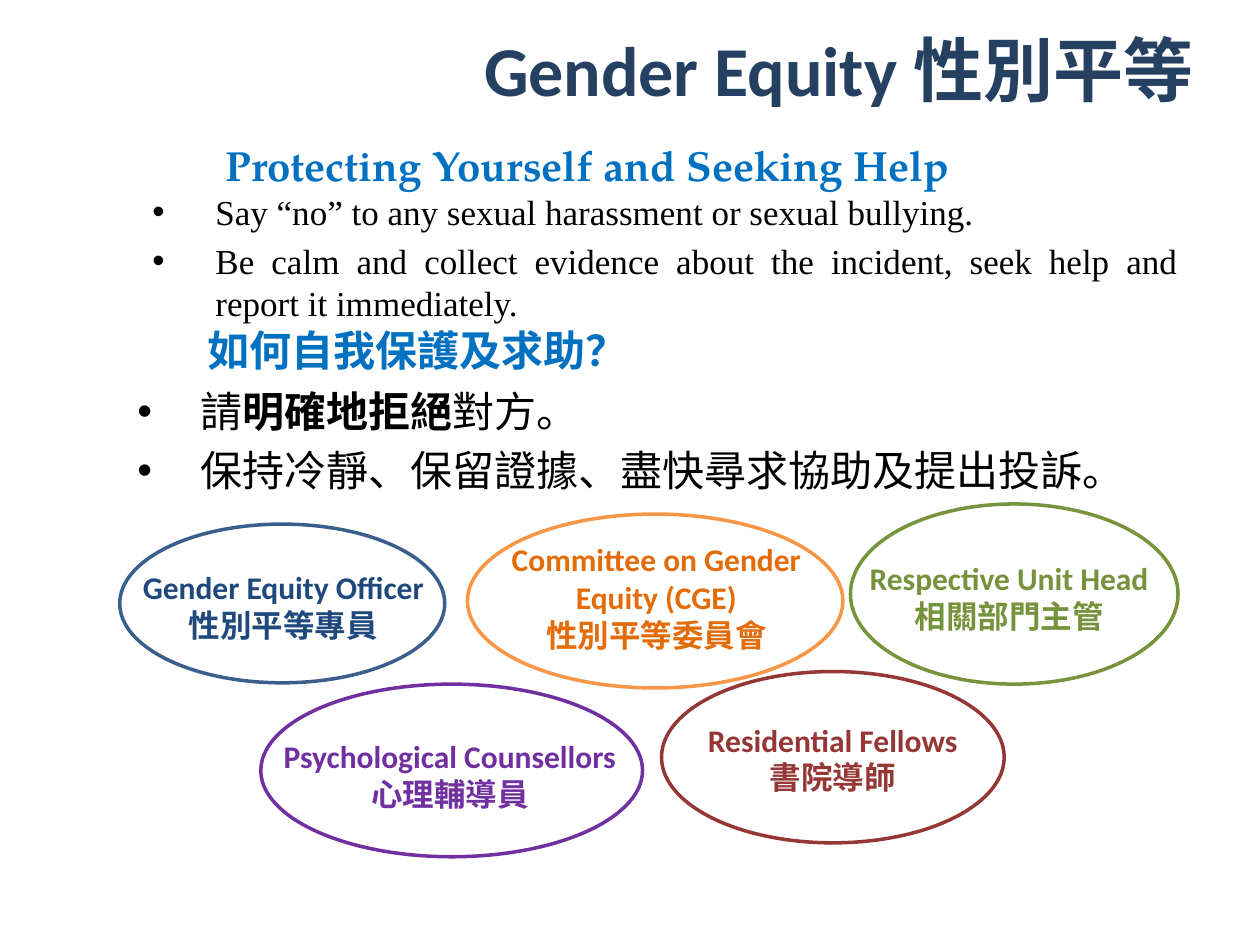
from lxml import etree
from pptx import Presentation
from pptx.dml.color import RGBColor
from pptx.enum import shapes, text
from pptx.oxml import ns
from pptx.util import Inches, Pt

NAVY = RGBColor(0x25, 0x40, 0x61)
SKY = RGBColor(0x00, 0x70, 0xC0)
BLACK = RGBColor(0, 0, 0)
WHITE = RGBColor(0xFF, 0xFF, 0xFF)
STEEL = RGBColor(0x3A, 0x5F, 0x8C)
BLUE = RGBColor(0x1F, 0x49, 0x7D)
AMBER = RGBColor(0xF7, 0x96, 0x46)
RUST = RGBColor(0xE3, 0x6C, 0x09)
LEAF = RGBColor(0x77, 0x93, 0x3C)
GREEN = RGBColor(0x76, 0x92, 0x3C)
PURPLE = RGBColor(0x70, 0x30, 0xA0)
WINE = RGBColor(0x95, 0x37, 0x35)
RED = RGBColor(0x95, 0x37, 0x34)

HAN = "Noto Sans CJK SC"
SERIF = "Times New Roman"
CENTER = text.PP_ALIGN.CENTER


def place(shape, box):
    shape.left, shape.top, shape.width, shape.height = map(Inches, box)


def add_run(para, words, face, size, color, bold=False):
    run = para.add_run()
    run.text = words
    font = run.font
    font.size, font.bold = Pt(size), bold
    font.color.rgb = color
    font.name = face
    asian = etree.SubElement(run._r.get_or_add_rPr(), ns.qn("a:ea"))
    asian.set("typeface", HAN)


def add_bullet(para):
    props = para._p.get_or_add_pPr()
    props.set("marL", str(Inches(0.5)))
    props.set("indent", str(-Inches(0.5)))
    face = etree.SubElement(props, ns.qn("a:buFont"))
    face.set("typeface", "Arial")
    mark = etree.SubElement(props, ns.qn("a:buChar"))
    mark.set("char", "•")


def fill_title(title, box):
    place(title, box)
    frame = title.text_frame
    frame.auto_size = text.MSO_AUTO_SIZE.NONE
    frame.vertical_anchor = text.MSO_ANCHOR.MIDDLE
    para = frame.paragraphs[0]
    para.alignment = CENTER
    add_run(para, "Gender Equity 性別平等", "Calibri", 40, NAVY, True)


def fill_list(body, box, items, face, size):
    """Each item is a list of (words, bold) runs."""
    place(body, box)
    frame = body.text_frame
    frame.auto_size = text.MSO_AUTO_SIZE.NONE
    for i, item in enumerate(items):
        para = frame.add_paragraph() if i else frame.paragraphs[0]
        para.alignment = text.PP_ALIGN.JUSTIFY
        para.space_before = Pt(size * 0.2 if i else 0)
        add_bullet(para)
        for words, bold in item:
            add_run(para, words, face, size, BLACK, bold)


def add_label(slide, box, lines, face, size, color):
    label = slide.shapes.add_textbox(*map(Inches, box))
    frame = label.text_frame
    frame.word_wrap = True
    for i, line in enumerate(lines):
        para = frame.add_paragraph() if i else frame.paragraphs[0]
        para.alignment = CENTER
        add_run(para, line, face, size, color, True)


def add_contact(slide, box, shift, lines, edge, ink, high=0.71, fill=None):
    """Draw an oval with its label set off by shift from the oval's corner."""
    oval = slide.shapes.add_shape(shapes.MSO_SHAPE.OVAL, *map(Inches, box))
    oval.shadow.inherit = False
    if fill is None:
        oval.fill.background()
    else:
        oval.fill.solid()
        oval.fill.fore_color.rgb = fill
    oval.line.color.rgb = edge
    oval.line.width = Pt(2)
    spot = (box[0] + shift[0], box[1] + shift[1], 3, high)
    add_label(slide, spot, lines, "Calibri", 18, ink)


def add_contacts(slide):
    add_contact(slide, (0.95, 4.16, 2.58, 1.26), (-0.2, 0.3),
                ["Gender Equity Officer", "性別平等專員"], STEEL, BLUE)
    add_contact(slide, (3.71, 4.08, 2.98, 1.38), (0, 0.16),
                ["Committee on Gender Equity (CGE)", "性別平等委員會"],
                AMBER, RUST, high=1.01)
    add_contact(slide, (6.75, 4, 2.6, 1.43), (-0.24, 0.39),
                ["Respective Unit Head", "相關部門主管"],
                LEAF, GREEN, fill=WHITE)
    add_contact(slide, (2.07, 5.43, 3.03, 1.37), (0, 0.37),
                ["Psychological Counsellors", "心理輔導員"], PURPLE, PURPLE)
    add_contact(slide, (5.25, 5.33, 2.72, 1.36), (-0.14, 0.34),
                ["Residential Fellows", "書院導師"], WINE, RED)


def main():
    deck = Presentation()
    deck.slide_width, deck.slide_height = Inches(10), Inches(7.5)
    slide = deck.slides.add_slide(deck.slide_layouts[3])
    title, first, second = slide.placeholders
    fill_title(title, (3.31, 0.11, 6.69, 0.87))
    fill_list(first, (1.11, 1.46, 8.34, 1.03), [
        [("Say “no” to any sexual harassment or sexual bullying.", False)],
        [("Be calm and collect evidence about the incident, "
          "seek help and report it immediately.", False)],
    ], SERIF, 20)
    fill_list(second, (0.99, 3.01, 8.91, 1.24), [
        [("請", False), ("明確地拒絕", True), ("對方。", False)],
        [("保持冷靜、保留證據、盡快尋求協助及提出投訴。", False)],
    ], HAN, 24)
    for box, words in (
        ((0.95, 1.06, 7.42, 0.5), "Protecting Yourself and Seeking Help"),
        ((0.45, 2.53, 5.72, 0.5), "如何自我保護及求助？"),
    ):
        add_label(slide, box, [words], "TeX Gyre Pagella", 24, SKY)
    add_contacts(slide)
    deck.save("out.pptx")


if __name__ == "__main__":
    main()
